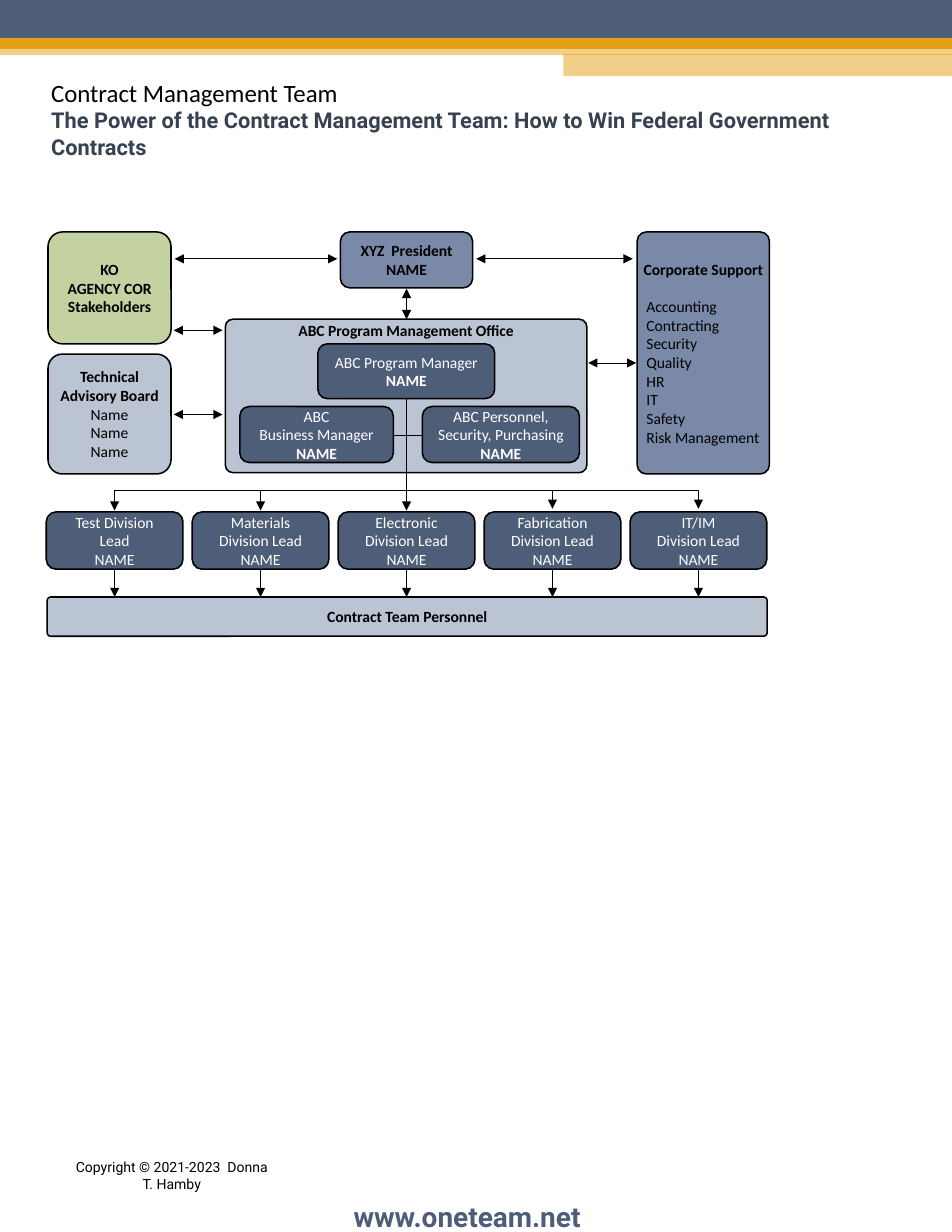
from lxml.etree import SubElement
from pptx import Presentation
from pptx.dml.color import RGBColor
from pptx.enum.shapes import MSO_CONNECTOR, MSO_SHAPE
from pptx.enum.text import MSO_ANCHOR, PP_ALIGN
from pptx.oxml.ns import qn
from pptx.util import Cm, Pt

HUES = {
    "navy": "4E5D78", "gold": "E6A015", "pale": "BBC4D3", "blue": "7989A7",
    "green": "C4D1A1", "slate": "374151", "black": "000000", "white": "FFFFFF",
}

deck = Presentation()
deck.slide_width, deck.slide_height = Cm(21.59), Cm(27.94)
slide = deck.slides.add_slide(deck.slide_layouts[6])
shapes = slide.shapes


def write(frame, paras, hue, size=10, face="Calibri", align=PP_ALIGN.CENTER):
    frame.word_wrap = True
    for i, runs in enumerate(paras):
        para = frame.paragraphs[0] if i == 0 else frame.add_paragraph()
        para.alignment = align
        for text, bold in runs:
            run = para.add_run()
            run.text = text
            run.font.size = Pt(size)
            run.font.name = face
            run.font.bold = bold
            run.font.color.rgb = RGBColor.from_string(HUES[hue])


def draw(x, y, w, h, fill, curve=None):
    kind = MSO_SHAPE.RECTANGLE if curve is None else MSO_SHAPE.ROUNDED_RECTANGLE
    box = shapes.add_shape(kind, Cm(x), Cm(y), Cm(w), Cm(h))
    box.shadow.inherit = False
    box.fill.solid()
    box.fill.fore_color.rgb = RGBColor.from_string(HUES[fill])
    if curve is None:
        box.line.fill.background()
    else:
        box.adjustments[0] = curve
        box.line.color.rgb = RGBColor.from_string(HUES["black"])
        box.line.width = Pt(1)
    return box


bands = [
    (0, 1.02, 21.59, 0.23, "gold", True),
    (0, 0, 21.59, 0.86, "navy", False),
    (0, 0.86, 21.59, 0.25, "gold", False),
    (12.78, 1.22, 8.81, 0.51, "gold", True),
]
for x, y, w, h, fill, sheer in bands:
    band = draw(x, y, w, h, fill)
    if sheer:
        tone = band._element.spPr.find(qn("a:solidFill"))[0]
        SubElement(tone, qn("a:alpha")).set("val", "50000")

draw(1.07, 13.54, 16.33, 0.89, "pale", 0.09)
draw(5.11, 7.24, 8.2, 3.48, "pale", 0.05)

mid = 9.22
step = 3.31
cols = [mid + step * (i - 2) for i in range(5)]
wires = [
    (3.94, 9.4, 5.05, 9.4, "both"),
    (3.94, 7.49, 5.05, 7.49, "both"),
    (3.96, 5.87, 7.65, 5.87, "both"),
    (10.8, 5.87, 14.35, 5.87, "both"),
    (13.34, 8.23, 14.43, 8.23, "both"),
    (mid, 6.55, mid, 7.24, "both"),
    (mid, 9.04, mid, 11.58, "end"),
    (8.48, 9.88, 10.03, 9.88, "none"),
]
wires += [(x, 12.9, x, 13.54, "end") for x in cols]
wires += [
    (mid + 0.02, 11.56 + span / 2, mid - 0.02, 11.56 - span / 2, "bent")
    for span in (4 * step, 2 * step)
]
for x, y, right, low, tips in wires:
    kind = MSO_CONNECTOR.ELBOW if tips == "bent" else MSO_CONNECTOR.STRAIGHT
    wire = shapes.add_connector(kind, Cm(x), Cm(y), Cm(right), Cm(low))
    wire.line.color.rgb = RGBColor.from_string(HUES["black"])
    wire.line.width = Pt(0.5)
    props = wire._element.spPr
    if tips == "bent":
        props.find(qn("a:xfrm")).set("rot", "5400000")
        guide = SubElement(props.find(qn("a:prstGeom")).find(qn("a:avLst")), qn("a:gd"))
        guide.set("name", "adj1")
        guide.set("fmla", "val 1150000")
    line = props.find(qn("a:ln"))
    if tips in ("both", "bent"):
        SubElement(line, qn("a:headEnd")).set("type", "triangle")
    if tips != "none":
        SubElement(line, qn("a:tailEnd")).set("type", "triangle")
    SubElement(props, qn("a:effectLst"))

boxes = [
    (7.72, 5.26, 3, 1.27, "blue", 0.17, "black", [[("XYZ  President NAME", True)]]),
    (7.21, 7.8, 4.01, 1.24, "navy", 0.17, "white",
     [[("ABC Program Manager ", False), ("NAME", True)]]),
    (1.09, 5.26, 2.79, 2.54, "green", 0.13, "black",
     [[("KO", True)], [("AGENCY COR", True)], [("Stakeholders", True)]]),
    (9.58, 9.22, 3.56, 1.27, "navy", 0.17, "white",
     [[("ABC Personnel, Security, Purchasing ", False), ("NAME", True)]]),
    (5.44, 9.22, 3.48, 1.27, "navy", 0.17, "white",
     [[("ABC", False)], [("Business Manager", False)], [("NAME", True)]]),
]
leads = [
    ["Test Division Lead"], ["Materials Division Lead"], ["Electronic Division Lead"],
    ["Fabrication Division Lead"], ["IT/IM", "Division Lead"],
]
for x, lead in zip(cols, leads):
    paras = [[(text, False)] for text in lead + ["NAME"]]
    boxes.append((x - 1.55, 11.61, 3.1, 1.3, "navy", 0.17, "white", paras))
for x, y, w, h, fill, curve, hue, paras in boxes:
    write(draw(x, y, w, h, fill, curve).text_frame, paras, hue)

board = draw(1.09, 8.03, 2.79, 2.72, "pale", 0.12).text_frame
write(board, [[("Technical Advisory Board", True)]] + [[("Name", False)]] * 3, "black")
staff = draw(14.45, 5.26, 3, 5.49, "blue", 0.07).text_frame
tasks = ["Accounting", "Contracting", "Security", "Quality", "HR", "IT", "Safety",
         "Risk Management"]
write(staff, [[("Corporate Support", True)]] + [[(task, False)] for task in tasks], "black")
for frame in (board, staff):
    frame.margin_left = frame.margin_right = 0
for para in staff.paragraphs[1:]:
    para.alignment = PP_ALIGN.LEFT
    para._p.get_or_add_pPr().set("marL", str(Cm(0.15)))
staff.paragraphs[1].space_before = Pt(12)

center, left = PP_ALIGN.CENTER, PP_ALIGN.LEFT
top, middle = MSO_ANCHOR.TOP, MSO_ANCHOR.MIDDLE
title = "The Power of the Contract Management Team: How to Win Federal Government Contracts"
labels = [
    (5.11, 7.24, 8.2, 0.51, middle, center,
     [("ABC Program Management Office", True, "black", 10, "Calibri")]),
    (1.07, 13.64, 16.33, 0.69, top, center,
     [("Contract Team Personnel", True, "black", 10, "Calibri")]),
    (0.91, 1.63, 18.75, 2.46, top, left,
     [("Contract Management Team", False, "black", 16, "Calibri"),
      (title, True, "slate", 14, "Roboto")]),
    (1.47, 25.91, 4.85, 1.5, middle, center,
     [("Copyright © 2021-2023  Donna T. Hamby", False, "black", 9, "Roboto")]),
    (7.77, 27.08, 6.02, 1.02, top, left,
     [("www.oneteam.net", True, "navy", 18, "Roboto")]),
]
for x, y, w, h, anchor, align, lines in labels:
    frame = shapes.add_textbox(Cm(x), Cm(y), Cm(w), Cm(h)).text_frame
    frame.vertical_anchor = anchor
    write(frame, [[line[:2]] for line in lines], "black", align=align)
    for para, (text, bold, hue, size, face) in zip(frame.paragraphs, lines):
        font = para.runs[0].font
        font.size, font.name = Pt(size), face
        font.color.rgb = RGBColor.from_string(HUES[hue])

deck.save("out.pptx")
